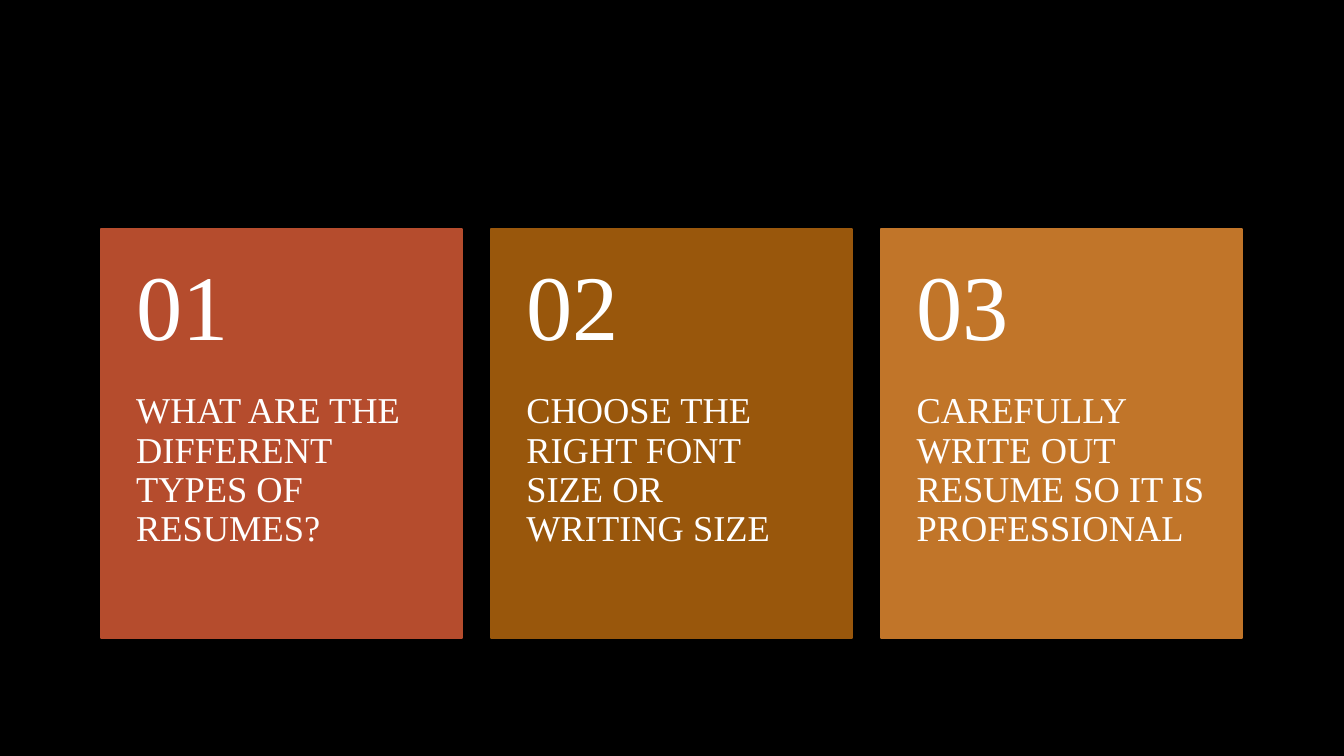
from pptx import Presentation
from pptx.dml.color import RGBColor
from pptx.enum.shapes import MSO_SHAPE
from pptx.enum.text import MSO_ANCHOR, PP_ALIGN
from pptx.util import Inches, Pt

BLACK = RGBColor(0x00, 0x00, 0x00)
WHITE = RGBColor(0xFF, 0xFF, 0xFF)
RUST = RGBColor(0xB5, 0x4C, 0x2D)
BROWN = RGBColor(0x99, 0x57, 0x0C)
AMBER = RGBColor(0xC1, 0x75, 0x29)

FONT = "Times New Roman"
CARD_LEFT, CARD_TOP = Inches(1), Inches(2.27)
CARD_WIDTH, CARD_HEIGHT = Inches(3.58), Inches(4.06)
CARD_PITCH = Inches(3.87)
NUMBER_SHARE = 0.4  # part of the card's height above the advice

CARDS = [
    (RUST, "WHAT ARE THE DIFFERENT TYPES OF RESUMES?"),
    (BROWN, "CHOOSE THE RIGHT FONT SIZE OR WRITING SIZE"),
    (AMBER, "CAREFULLY WRITE OUT RESUME SO IT IS PROFESSIONAL"),
]


def add_panel(shapes, left, color):
    panel = shapes.add_shape(MSO_SHAPE.RECTANGLE, left, CARD_TOP, CARD_WIDTH, CARD_HEIGHT)
    panel.shadow.inherit = False
    panel.fill.solid()
    panel.fill.fore_color.rgb = color
    panel.line.color.rgb = color
    panel.line.width = Pt(1.25)


def add_label(shapes, left, top, height, wording, size, anchor, inset_top, inset_bottom):
    label = shapes.add_textbox(left, top, CARD_WIDTH, height)
    frame = label.text_frame
    frame.word_wrap = True
    frame.vertical_anchor = anchor
    frame.margin_left = frame.margin_right = Inches(0.35)
    frame.margin_top, frame.margin_bottom = Inches(inset_top), Inches(inset_bottom)
    paragraph = frame.paragraphs[0]
    paragraph.alignment = PP_ALIGN.LEFT
    paragraph.line_spacing = 0.9
    run = paragraph.add_run()
    run.text = wording
    run.font.name = FONT
    run.font.size = Pt(size)
    run.font.color.rgb = WHITE


def add_card(slide, column, color, advice):
    """Add a coloured card with its number above its advice."""
    shapes = slide.shapes.add_group_shape().shapes
    left = CARD_LEFT + column * CARD_PITCH
    number_height = int(CARD_HEIGHT * NUMBER_SHARE)
    add_panel(shapes, left, color)
    add_label(shapes, left, CARD_TOP + number_height, CARD_HEIGHT - number_height,
              advice, 26, MSO_ANCHOR.TOP, 0, 0.36)
    add_label(shapes, left, CARD_TOP, number_height,
              f"{column + 1:02}", 66, MSO_ANCHOR.MIDDLE, 0.18, 0.18)


def main():
    deck = Presentation()
    deck.slide_width, deck.slide_height = Inches(13.33), Inches(7.5)
    slide = deck.slides.add_slide(deck.slide_layouts[6])
    slide.background.fill.solid()
    slide.background.fill.fore_color.rgb = BLACK
    for column, (color, advice) in enumerate(CARDS):
        add_card(slide, column, color, advice)
    deck.save("out.pptx")


if __name__ == "__main__":
    main()
